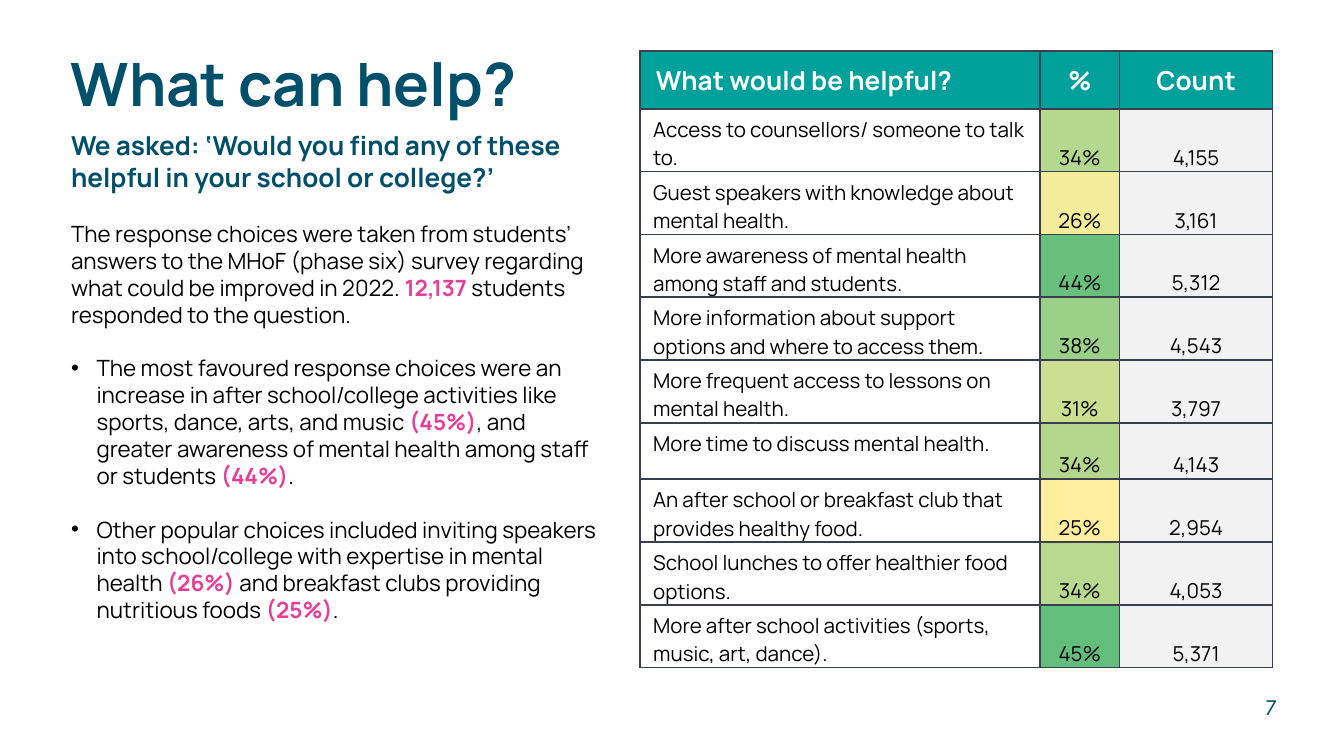
from lxml.etree import SubElement
from pptx import Presentation
from pptx.dml.color import RGBColor
from pptx.enum.text import MSO_ANCHOR, PP_ALIGN
from pptx.oxml.ns import qn
from pptx.util import Inches, Pt

NAVY = RGBColor(0x00, 0x4F, 0x6B)
PINK = RGBColor(0xE7, 0x3E, 0x97)
TEAL = RGBColor(0x00, 0xA1, 0x9B)
BLACK = RGBColor(0x00, 0x00, 0x00)
WHITE = RGBColor(0xFF, 0xFF, 0xFF)
GREY = RGBColor(0xF2, 0xF2, 0xF2)
BORDER = RGBColor(0x3A, 0x3F, 0x50)

TITLE = dict(size=Pt(32), bold=True, color=NAVY)
HEADING = dict(size=Pt(14), bold=True, color=NAVY)
BODY = dict(size=Pt(12), bold=False, color=BLACK)
HIGHLIGHT = dict(size=Pt(12), bold=True, color=PINK)
TABLE_HEAD = dict(size=Pt(14), bold=True, color=WHITE)
TABLE_BODY = dict(size=Pt(11), bold=False, color=BLACK)
PAGE_NUMBER = dict(size=Pt(12), name="League Spartan", color=NAVY)

QUESTION = "We asked: ‘Would you find any of these helpful in your school or college?’"
# Every second span is highlighted.
INTRO = [
    "The response choices were taken from students’ answers to the MHoF (phase six) "
    "survey regarding what could be improved in 2022. ",
    "12,137", " students responded to the question.",
]
FINDINGS = [
    ["The most favoured response choices were an increase in after school/college "
     "activities like sports, dance, arts, and music ",
     "(45%)", ", and greater awareness of mental health among staff or students ",
     "(44%)", "."],
    ["Other popular choices included inviting speakers into school/college with "
     "expertise in mental health ",
     "(26%) ", "and breakfast clubs providing nutritious foods", " (25%)", "."],
]

HEADERS = ["What would be helpful?", "%", "Count"]
ANSWERS = [
    ("Access to counsellors/ someone to talk to.", "34%", "4,155", "B4D88D"),
    ("Guest speakers with knowledge about mental health.", "26%", "3,161", "F3EC9A"),
    ("More awareness of mental health among staff and students.", "44%", "5,312", "69C07D"),
    ("More information about support options and where to access them.", "38%", "4,543", "9AD087"),
    ("More frequent access to lessons on mental health.", "31%", "3,797", "CADF91"),
    ("More time to discuss mental health.", "34%", "4,143", "B3D78C"),
    ("An after school or breakfast club that provides healthy food.", "25%", "2,954", "FFEF9C"),
    ("School lunches to offer healthier food options.", "34%", "4,053", "B9D98E"),
    ("More after school activities (sports, music, art, dance).", "45%", "5,371", "63BE7B"),
]
COLUMN_WIDTHS = [2.98, 0.59, 1.14]
TABLE_HEIGHT, HEADER_HEIGHT, SHORT_HEIGHT = 4.59, 0.43, 0.42
TALL_HEIGHT = (TABLE_HEIGHT - HEADER_HEIGHT - SHORT_HEIGHT) / 8
ROW_HEIGHTS = [HEADER_HEIGHT] + [TALL_HEIGHT] * 5 + [SHORT_HEIGHT] + [TALL_HEIGHT] * 3


class SlideBuilder:
    def __init__(self, page, font_name):
        self.page = page
        self.font_name = font_name

    def add_span(self, para, text, style):
        span = para.add_run()
        span.text = text
        for name, value in {"name": self.font_name, **style}.items():
            if name == "color":
                span.font.color.rgb = value
            else:
                setattr(span.font, name, value)

    def add_box(self, left, top, width, height, **frame_format):
        """Add a wrapping text box and return its text frame."""
        box = self.page.shapes.add_textbox(
            Inches(left), Inches(top), Inches(width), Inches(height))
        frame = box.text_frame
        for name, value in {"word_wrap": True, **frame_format}.items():
            setattr(frame, name, value)
        return frame

    def add_body_paragraph(self, frame, spans, bullet=False):
        para = frame.add_paragraph()
        para.line_spacing = Pt(14.4)
        para.space_before = Pt(14.4)
        if bullet:
            properties = para._p.get_or_add_pPr()
            properties.set("marL", str(Inches(0.19)))
            properties.set("indent", str(-Inches(0.19)))
            SubElement(properties, qn("a:buFont"), typeface="Arial")
            SubElement(properties, qn("a:buChar"), char="•")
        for index, text in enumerate(spans):
            self.add_span(para, text, HIGHLIGHT if index % 2 else BODY)

    def add_table(self, left, top, column_widths, row_heights):
        table = self.page.shapes.add_table(
            len(row_heights), len(column_widths), Inches(left), Inches(top),
            Inches(sum(column_widths)), Inches(sum(row_heights))).table
        for column, width in zip(table.columns, column_widths):
            column.width = Inches(width)
        for row, height in zip(table.rows, row_heights):
            row.height = Inches(height)
        return table

    def fill_cell(self, cell, text, style, color, anchor, align=PP_ALIGN.CENTER,
                  left=0, top=0, right=0):
        cell_format = dict(
            vertical_anchor=anchor, margin_left=Inches(left), margin_top=Inches(top),
            margin_right=Inches(right), margin_bottom=0)
        for name, value in cell_format.items():
            setattr(cell, name, value)
        self.add_borders(cell)
        cell.fill.solid()
        cell.fill.fore_color.rgb = color
        para = cell.text_frame.paragraphs[0]
        para.alignment = align
        self.add_span(para, text, style)

    def add_borders(self, cell):
        properties = cell._tc.get_or_add_tcPr()
        for side in ("a:lnL", "a:lnR", "a:lnT", "a:lnB"):
            line = SubElement(properties, qn(side), w=str(Pt(1)))
            fill = SubElement(line, qn("a:solidFill"))
            SubElement(fill, qn("a:srgbClr"), val=str(BORDER))


def main():
    deck = Presentation()
    deck.slide_width = Inches(10)
    deck.slide_height = deck.slide_width * 9 // 16
    page = deck.slides.add_slide(deck.slide_layouts[6])
    builder = SlideBuilder(page, "Manrope")

    frame = builder.add_box(0.43, 0.91, 4.15, 4.21)
    question = frame.paragraphs[0]
    question.line_spacing = Pt(17.2)
    builder.add_span(question, QUESTION, HEADING)
    builder.add_body_paragraph(frame, INTRO)
    for finding in FINDINGS:
        builder.add_body_paragraph(frame, finding, bullet=True)

    table = builder.add_table(4.76, 0.38, COLUMN_WIDTHS, ROW_HEIGHTS)
    for column, header in enumerate(HEADERS):
        placing = {} if column else dict(align=PP_ALIGN.LEFT, left=0.12)
        builder.fill_cell(table.cell(0, column), header, TABLE_HEAD, TEAL,
                          MSO_ANCHOR.MIDDLE, **placing)
    for row, (answer, percent, count, shade) in enumerate(ANSWERS, start=1):
        builder.fill_cell(table.cell(row, 0), answer, TABLE_BODY, WHITE,
                          MSO_ANCHOR.TOP, PP_ALIGN.LEFT, left=0.1, top=0.05, right=0.1)
        figures = [(percent, RGBColor.from_string(shade)), (count, GREY)]
        for column, (figure, color) in enumerate(figures, start=1):
            builder.fill_cell(table.cell(row, column), figure, TABLE_BODY, color,
                              MSO_ANCHOR.BOTTOM)

    title = builder.add_box(0.43, 0.25, 8.16, 0.8).paragraphs[0]
    title.line_spacing = Pt(42)
    builder.add_span(title, "What can help?", TITLE)

    number = builder.add_box(
        8.91, 5.12, 0.59, 0.24, vertical_anchor=MSO_ANCHOR.BOTTOM,
        margin_left=0, margin_top=0, margin_right=0, margin_bottom=0).paragraphs[0]
    number.alignment = PP_ALIGN.RIGHT
    builder.add_span(number, "7", PAGE_NUMBER)

    deck.save("out.pptx")


if __name__ == "__main__":
    main()
